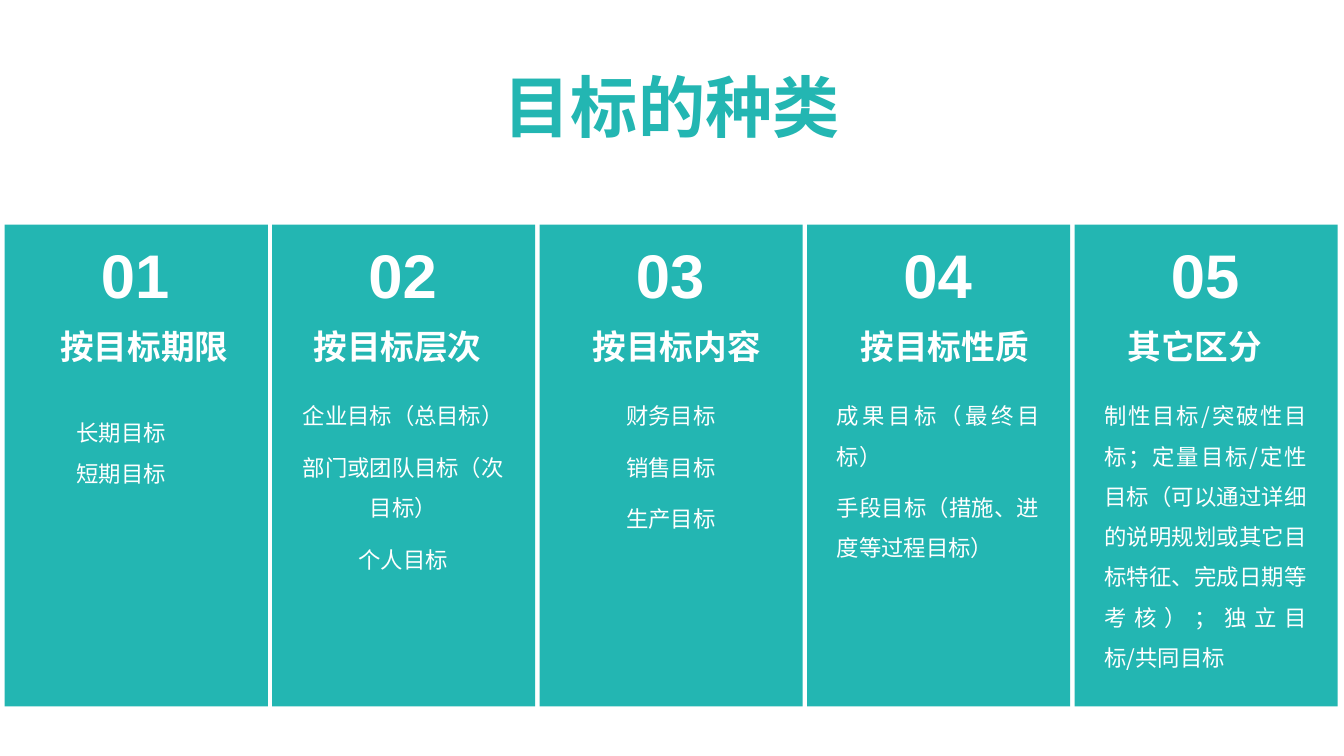
from pptx import Presentation
from pptx.dml.color import RGBColor
from pptx.enum.shapes import MSO_SHAPE as Shape
from pptx.enum.text import MSO_ANCHOR as Anchor, MSO_AUTO_SIZE as AutoSize, PP_ALIGN as Align
from pptx.oxml.ns import qn
from pptx.util import Cm, Pt
from lxml.etree import SubElement

TEAL = RGBColor(0x23, 0xB6, 0xB2)
WHITE = RGBColor(0xFF, 0xFF, 0xFF)
CJK_FONT = "Noto Sans CJK SC"

CARD_LEFT, CARD_TOP, CARD_WIDTH, CARD_HEIGHT, CARD_PITCH = 0.12, 5.66, 6.63, 12.14, 6.74

NUMBER = {"name": "Arial", "size": Pt(44), "bold": True}
HEADING = {"name": CJK_FONT, "size": Pt(24), "bold": True}
BODY = {"name": CJK_FONT, "size": Pt(16), "bold": False}

WIDE_BODY = {"shift": 0.5, "top": 9.68, "width": 5.61, "gap": 8, "wrap": True}
SHORT_BODY = {"shift": 1.56, "top": 10.11, "width": 2.77, "gap": 0, "wrap": False}

# heading, heading shift, heading width, body layout, body alignment, body lines
CARDS = [
    ("按目标期限", 1.15, 4.75, SHORT_BODY, Align.LEFT, ["长期目标", "短期目标"]),
    ("按目标层次", 0.79, 4.75, WIDE_BODY, Align.CENTER,
     ["企业目标（总目标）", "部门或团队目标（次目标）", "个人目标"]),
    ("按目标内容", 1.09, 4.75, WIDE_BODY, Align.CENTER,
     ["财务目标", "销售目标", "生产目标"]),
    ("按目标性质", 1.1, 4.75, WIDE_BODY, Align.JUSTIFY,
     ["成果目标（最终目标）", "手段目标（措施、进度等过程目标）"]),
    ("其它区分", 1.09, 3.91, WIDE_BODY, Align.JUSTIFY,
     ["制性目标/突破性目标；定量目标/定性目标（可以通过详细的说明规划或其它目标特征、"
      "完成日期等考核）；独立目标/共同目标"]),
]


def write_lines(box, lines, font, color, align, wrap=True, spacing=1.0, gap=0):
    """Fill a text shape with one paragraph per line; gap is in points."""
    frame = box.text_frame
    frame.word_wrap = wrap
    frame.auto_size = AutoSize.SHAPE_TO_FIT_TEXT
    frame.vertical_anchor = Anchor.TOP
    for index, line in enumerate(lines):
        para = frame.paragraphs[0] if index == 0 else frame.add_paragraph()
        para.alignment = align
        para.line_spacing = spacing
        para.space_before = Pt(gap if index else 0)
        span = para.add_run()
        span.text = line
        for name, value in font.items():
            setattr(span.font, name, value)
        span.font.color.rgb = color
        SubElement(span.font._element, qn("a:ea"), typeface=CJK_FONT)


def add_text(page, left, top, width, height, *args, **options):
    box = page.shapes.add_textbox(Cm(left), Cm(top), Cm(width), Cm(height))
    write_lines(box, *args, **options)


deck = Presentation()
deck.slide_width, deck.slide_height = Cm(33.87), Cm(19.05)
page = deck.slides.add_slide(deck.slide_layouts[5])

title = page.shapes.title
title.left, title.top, title.width, title.height = Cm(12.22), Cm(1.52), Cm(9.42), Cm(2.31)
write_lines(title, ["目标的种类"], {"name": "Arial", "size": Pt(48), "bold": True},
            TEAL, Align.CENTER)

for index, (heading, shift, width, layout, align, lines) in enumerate(CARDS):
    left = CARD_LEFT + index * CARD_PITCH
    card = page.shapes.add_shape(Shape.RECTANGLE, Cm(left), Cm(CARD_TOP),
                                 Cm(CARD_WIDTH), Cm(CARD_HEIGHT))
    card.shadow.inherit = False
    card.fill.solid()
    card.fill.fore_color.rgb = TEAL
    card.line.fill.background()

    add_text(page, left + 1.6, 5.84, 3.38, 2.13, [f"{index + 1:02}"],
             NUMBER, WHITE, Align.CENTER)
    add_text(page, left + shift, 8.08, width, 1.27, [heading],
             HEADING, WHITE, Align.LEFT, wrap=False)
    add_text(page, left + layout["shift"], layout["top"], layout["width"], 2.31, lines,
             BODY, WHITE, align, wrap=layout["wrap"], spacing=1.5, gap=layout["gap"])

deck.save("out.pptx")
